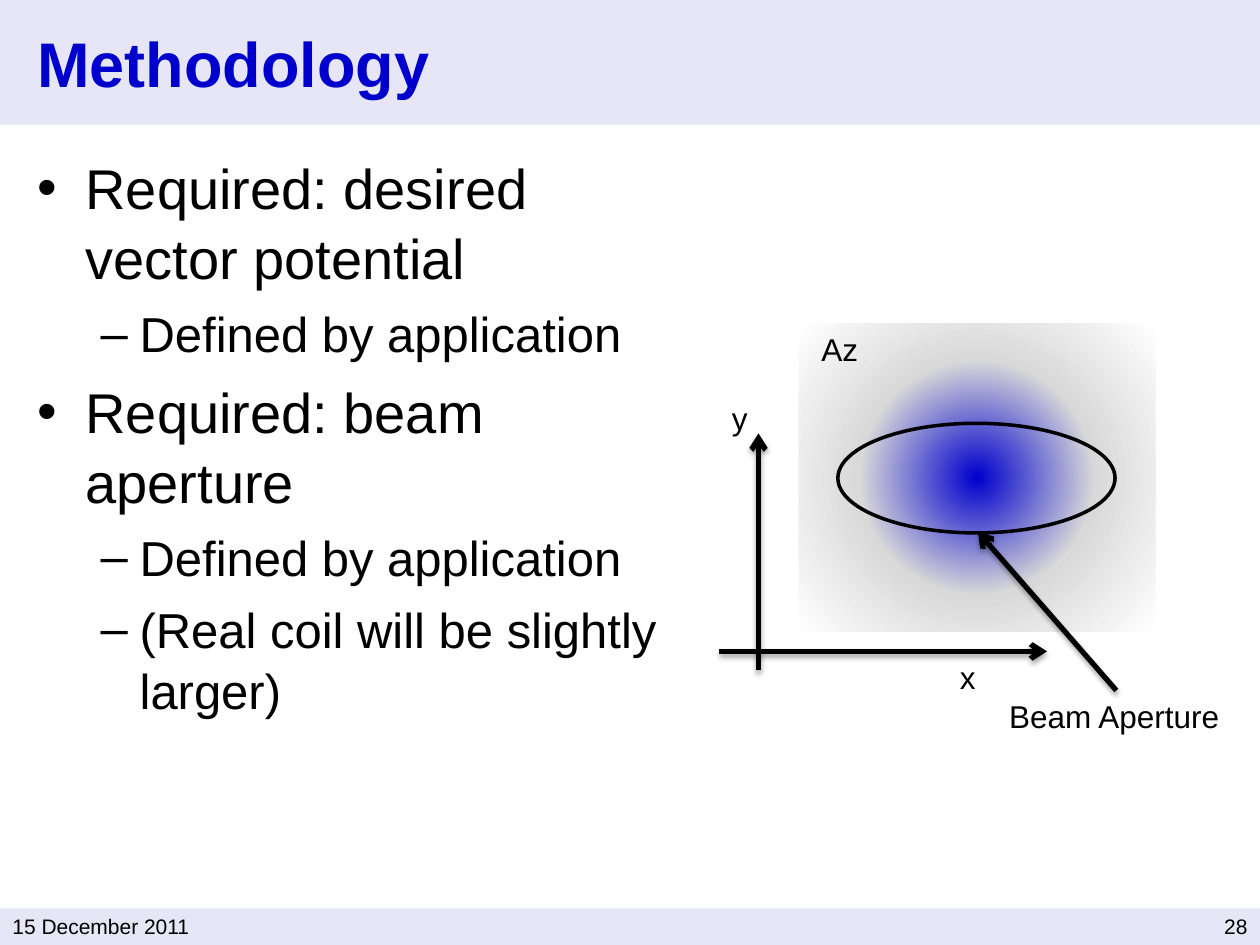
from lxml import etree
from pptx import Presentation
from pptx import util as u
from pptx.dml.color import RGBColor
from pptx.enum import shapes, text
from pptx.oxml import parse_xml
from pptx.oxml.ns import nsdecls, qn

Inches, Pt = u.Inches, u.Pt
FONT = "Arial"
BLACK, BLUE, BAND = "000000", "0000CC", "7575D1"
# Bullet character, left margin and hanging indent (inches), size (points)
LEVELS = [("•", 0.38, 0.38, 32), ("–", 0.81, 0.31, 28)]
POINTS = [
    (0, "Required: desired vector potential"),
    (1, "Defined by application"),
    (0, "Required: beam aperture"),
    (1, "Defined by application"),
    (1, "(Real coil will be slightly larger)"),
]


def color(value):
    return RGBColor.from_string(value)


def add_run(p, words, size, fill=BLACK, bold=False):
    r = p.add_run()
    r.text = words
    r.font.name = FONT
    r.font.size = Pt(size)
    r.font.bold = bold
    r.font.color.rgb = color(fill)


def add_frame(s, x, y, w, h, wrap=True):
    box = s.shapes.add_textbox(Inches(x), Inches(y), Inches(w), Inches(h))
    tf = box.text_frame
    tf.word_wrap = wrap
    return tf


def add_label(s, words, x, y, w, h=0.4, size=18, align=text.PP_ALIGN.LEFT):
    p = add_frame(s, x, y, w, h, wrap=False).paragraphs[0]
    p.alignment = align
    add_run(p, words, size)


def add_plain_shape(s, kind, x, y, w, h):
    sp = s.shapes.add_shape(kind, Inches(x), Inches(y), Inches(w), Inches(h))
    sp.shadow.inherit = False
    sp.line.fill.background()
    return sp


def add_band(s, y, h):
    """Full-width translucent strip."""
    sp = add_plain_shape(s, shapes.MSO_SHAPE.RECTANGLE, 0, y, 10, h)
    sp.fill.solid()
    sp.fill.fore_color.rgb = color(BAND)
    tint = sp.fill._xPr.find(".//" + qn("a:srgbClr"))
    etree.SubElement(tint, qn("a:alpha")).set("val", "18000")


def add_field(s, x, y, w, h):
    """Rectangle with a radial gradient from its centre."""
    sp = add_plain_shape(s, shapes.MSO_SHAPE.RECTANGLE, x, y, w, h)
    stops = "".join(
        f'<a:gs pos="{pos * 1000}"><a:srgbClr val="{value}"/></a:gs>'
        for pos, value in [(0, BLUE), (50, "D9D9D9"), (100, "FFFFFF")]
    )
    grad = parse_xml(
        f'<a:gradFill {nsdecls("a")} rotWithShape="1"><a:gsLst>{stops}</a:gsLst>'
        '<a:path path="circle"><a:fillToRect l="50000" t="50000" r="50000" b="50000"/>'
        "</a:path></a:gradFill>"
    )
    sp._element.spPr.find(qn("a:prstGeom")).addnext(grad)


def add_aperture(s, x, y, w, h):
    sp = add_plain_shape(s, shapes.MSO_SHAPE.OVAL, x, y, w, h)
    sp.fill.background()
    sp.line.color.rgb = color(BLACK)
    sp.line.width = Pt(2)


def add_arrow(s, x1, y1, x2, y2):
    line = s.shapes.add_connector(
        shapes.MSO_CONNECTOR.STRAIGHT, Inches(x1), Inches(y1), Inches(x2), Inches(y2)
    )
    line.line.color.rgb = color(BLACK)
    line.line.width = Pt(3)
    etree.SubElement(line.line._get_or_add_ln(), qn("a:tailEnd")).set("type", "arrow")
    line._element.spPr.append(parse_xml(
        f'<a:effectLst {nsdecls("a")}>'
        f'<a:outerShdw blurRad="{Pt(3.1)}" dist="{Pt(1.8)}" dir="5400000" rotWithShape="0">'
        f'<a:srgbClr val="{BLACK}"><a:alpha val="35000"/></a:srgbClr>'
        "</a:outerShdw></a:effectLst>"
    ))


def add_title(s, words):
    tf = add_frame(s, 0.2, 0.07, 7.17, 0.85)
    tf.vertical_anchor = text.MSO_ANCHOR.MIDDLE
    add_run(tf.paragraphs[0], words, 36, BLUE, bold=True)


def add_bullets(s, points):
    tf = add_frame(s, 0.2, 1.15, 5.28, 6.06)
    for i, (level, words) in enumerate(points):
        mark, margin, hang, size = LEVELS[level]
        p = tf.add_paragraph() if i else tf.paragraphs[0]
        p.level = level
        p.line_spacing = 1.04
        if i:
            p.space_before = Pt(round(0.22 * size))
        pPr = p._p.get_or_add_pPr()
        pPr.set("marL", str(Inches(margin)))
        pPr.set("indent", str(-Inches(hang)))
        etree.SubElement(pPr, qn("a:buFont")).set("typeface", FONT)
        etree.SubElement(pPr, qn("a:buChar")).set("char", mark)
        add_run(p, words, size)


def add_diagram(s):
    add_field(s, 6.34, 2.57, 2.83, 2.44)
    add_aperture(s, 6.65, 3.36, 2.2, 0.87)
    add_label(s, "Az", 6.42, 2.57, 0.5)
    add_label(s, "Beam Aperture", 7.91, 5.48, 1.88)
    add_arrow(s, 8.86, 5.48, 7.76, 4.22)
    add_arrow(s, 6.02, 5.32, 6.02, 3.44)
    add_arrow(s, 5.71, 5.17, 8.31, 5.17)
    add_label(s, "x", 7.52, 5.17, 0.33)
    add_label(s, "y", 5.71, 3.12, 0.33)


def main():
    prs = Presentation()
    prs.slide_width, prs.slide_height = Inches(10), Inches(7.5)
    s = prs.slides.add_slide(prs.slide_layouts[6])
    add_band(s, 0, 0.99)
    add_band(s, 7.21, 0.29)
    add_label(s, "28", 8.19, 7.2, 1.81, 0.3, 12, text.PP_ALIGN.RIGHT)
    add_label(s, "15 December 2011", 0, 7.2, 1.81, 0.3, 12)
    add_bullets(s, POINTS)
    add_title(s, "Methodology")
    add_diagram(s)
    prs.save("out.pptx")


if __name__ == "__main__":
    main()
